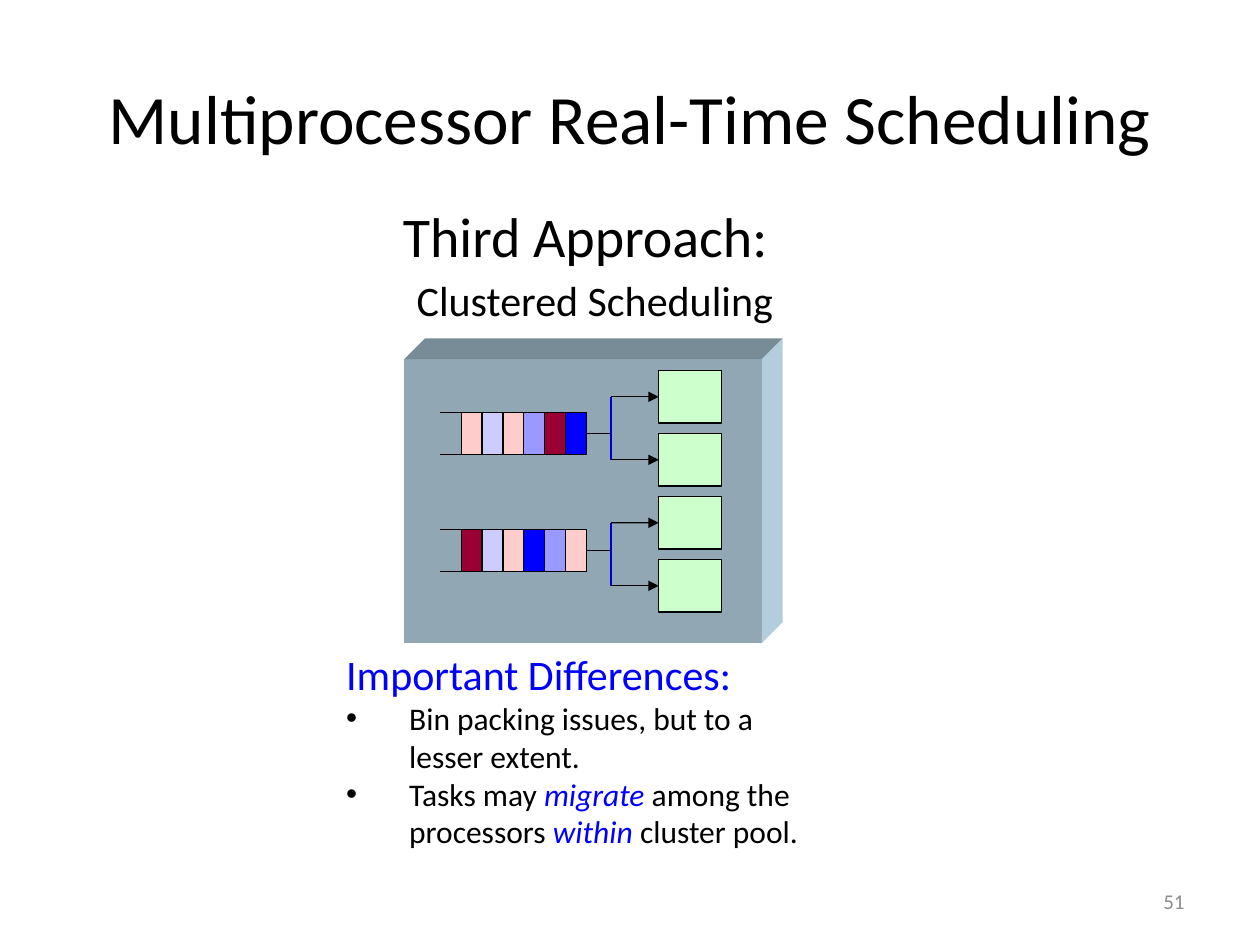
from dataclasses import dataclass
from typing import Any
from lxml.etree import SubElement as Sub
from pptx import Presentation
from pptx.dml.color import RGBColor as Rgb
from pptx.enum.shapes import MSO_CONNECTOR as Link, MSO_SHAPE as Kind
from pptx.enum.text import MSO_ANCHOR as Anchor, MSO_AUTO_SIZE as Auto, PP_ALIGN as Align
from pptx.oxml.ns import qn
from pptx.util import Cm, Pt

BLACK, BLUE, GREY = "000000", "0000FF", "8C8C8C"
PINK, PALE, LILAC, WINE = "FFCCCC", "CCCCFF", "9999FF", "990033"
QUEUES = [
    (8.31, [PINK, PALE, PINK, LILAC, WINE, BLUE]),
    (10.67, [WINE, PALE, PINK, BLUE, LILAC, PINK]),
]
POINTS = [
    [("Important Differences:", BLUE, False)],
    [("Bin packing issues, but to a lesser extent.", BLACK, False)],
    [("Tasks may ", BLACK, False), ("migrate", BLUE, True),
     (" among the processors ", BLACK, False), ("within ", BLUE, True),
     ("cluster pool.", BLACK, False)],
]


def tint(code):
    return Rgb.from_string(code)


def fit(item, values):
    for name, value in values.items():
        setattr(item, name, value)


@dataclass
class Board:
    """Draws styled elements on the current slide."""
    slide: Any
    face: str = "Calibri"
    thin: float = 0.75

    def paint(self, shape, fill, edge):
        shape.shadow.inherit = False
        shape.fill.solid()
        shape.fill.fore_color.rgb = tint(fill)
        if edge:
            shape.line.color.rgb = tint(edge)
            shape.line.width = Pt(self.thin)
        else:
            shape.line.fill.background()
        return shape

    def rect(self, x, y, w, h, fill, edge=BLACK):
        shape = self.slide.shapes.add_shape(Kind.RECTANGLE, Cm(x), Cm(y), Cm(w), Cm(h))
        return self.paint(shape, fill, edge)

    def poly(self, points, fill):
        first, *rest = [(Cm(x), Cm(y)) for x, y in points]
        form = self.slide.shapes.build_freeform(*first)
        form.add_line_segments(rest, close=True)
        return self.paint(form.convert_to_shape(), fill, None)

    def line(self, x1, y1, x2, y2, color=BLACK, width=None, head=False):
        wire = self.slide.shapes.add_connector(
            Link.STRAIGHT, Cm(x1), Cm(y1), Cm(x2), Cm(y2))
        wire.line.color.rgb = tint(color)
        wire.line.width = Pt(width or self.thin)
        if head:
            Sub(wire.get_or_add_ln(), qn("a:tailEnd"), type="triangle")
        Sub(wire.element.spPr, qn("a:effectLst"))
        return wire

    def run(self, par, text, size, color=BLACK, italic=False):
        run = par.add_run()
        run.text = text
        fit(run.font, {"name": self.face, "size": Pt(size), "italic": italic})
        run.font.color.rgb = tint(color)

    def frame(self, x, y, w, h, **style):
        frame = self.slide.shapes.add_textbox(Cm(x), Cm(y), Cm(w), Cm(h)).text_frame
        fit(frame, {"word_wrap": True, **style})
        return frame

    def label(self, box, text, size, color=BLACK, align=Align.LEFT, **style):
        par = self.frame(*box, **style).paragraphs[0]
        par.alignment = align
        self.run(par, text, size, color)

    def notes(self, box, rows):
        frame = self.frame(*box, auto_size=Auto.SHAPE_TO_FIT_TEXT)
        for n, row in enumerate(rows):
            par = frame.add_paragraph() if n else frame.paragraphs[0]
            props = par._p.get_or_add_pPr()
            props.set("marL", str(Cm(1.27)))
            props.set("indent", str(-Cm(1.27)))
            if n:
                Sub(props, qn("a:buFont"), typeface="Arial")
                Sub(props, qn("a:buChar"), char="•")
            for text, color, italic in row:
                self.run(par, text, 18 if n else 24, color, italic)


def panel(board):
    left, top, right, base, deep = 8.15, 7.24, 15.36, 12.96, 0.42
    board.rect(left, top, right - left, base - top, "91A8B4", None)
    board.poly([(left, top), (left + deep, top - deep),
                (right + deep, top - deep), (right, top)], "788C97")
    board.poly([(right, top), (right + deep, top - deep),
                (right + deep, base - deep), (right, base)], "B3CDDD")


def cluster(board, y, fills, cores):
    left, wide, high, trunk = 9.3, 0.42, 0.85, 12.32
    slots = [board.rect(left + n * wide, y, wide, high, fill)
             for n, fill in enumerate(fills)]
    for edge in (y, y + high):
        board.line(left, edge, left - 0.43, edge)
    mid = y + high / 2
    stub = board.line(left + wide * len(fills), mid, trunk, mid)
    stub.begin_connect(slots[-1], 3)
    mids = [(core.top + core.height / 2) / Cm(1) for core in cores]
    board.line(trunk, mids[0], trunk, mids[1], "0000CC", 1)
    for core, level in zip(cores, mids):
        arrow = board.line(trunk, level, core.left / Cm(1), level, head=True)
        arrow.end_connect(core, 1)


def main():
    deck = Presentation()
    fit(deck, {"slide_width": Cm(25.4), "slide_height": Cm(19.05)})
    board = Board(deck.slides.add_slide(deck.slide_layouts[6]))
    loose = {"word_wrap": False, "auto_size": Auto.SHAPE_TO_FIT_TEXT}
    board.label((1.27, 0.76, 22.86, 3.18), "Multiprocessor Real-Time Scheduling", 39.6,
                align=Align.CENTER, vertical_anchor=Anchor.MIDDLE)
    board.label((7.87, 3.94, 7.92, 1.63), "Third Approach:", 32, **loose)
    board.label((8.15, 5.41, 7.8, 1.27), "Clustered Scheduling", 24, **loose)
    panel(board)
    cores = [board.rect(13.28, 7.47 + n * 1.27, 1.27, 1.06, "CCFFCC") for n in range(4)]
    for n, (y, fills) in enumerate(QUEUES):
        cluster(board, y, fills, cores[2 * n:2 * n + 2])
    board.notes((6.73, 12.95, 10.21, 4.37), POINTS)
    board.label((18.21, 17.65, 5.92, 1.02), "51", 12, GREY, Align.RIGHT,
                vertical_anchor=Anchor.MIDDLE)
    deck.save("out.pptx")


if __name__ == "__main__":
    main()
